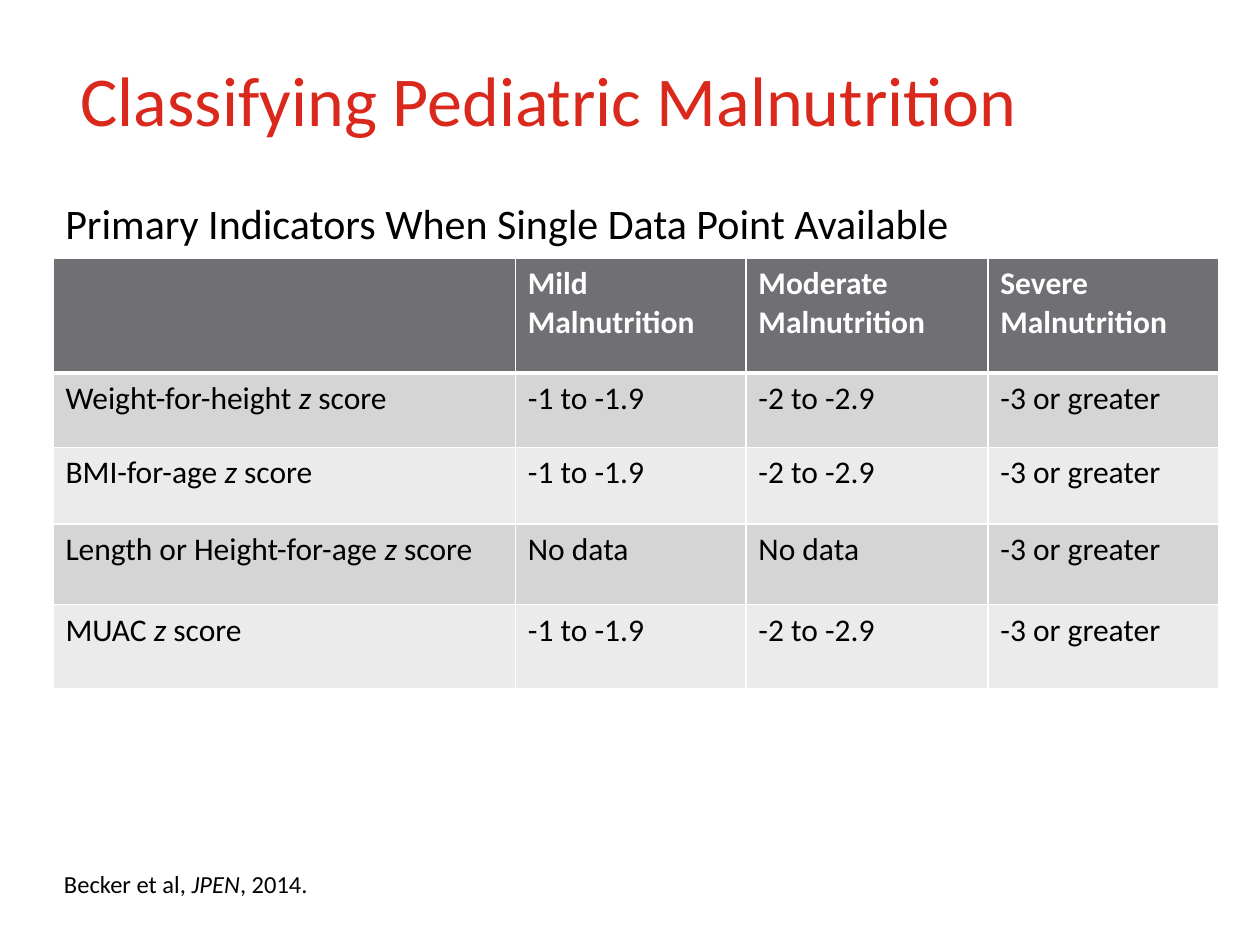
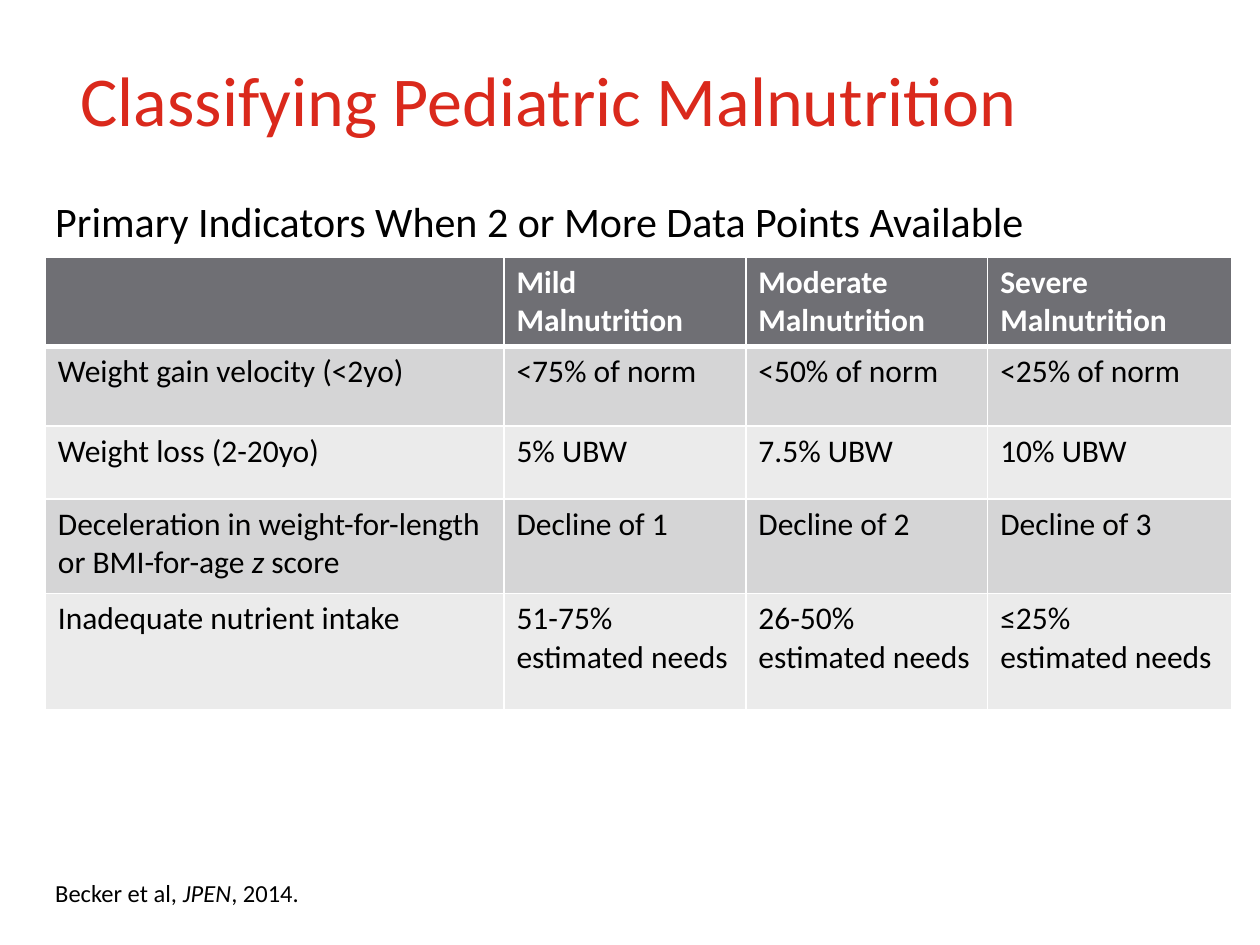
from dataclasses import dataclass

from lxml import etree
from pptx import Presentation
from pptx.dml.color import RGBColor
from pptx.enum.text import MSO_ANCHOR, MSO_AUTO_SIZE as AutoSize, PP_ALIGN
from pptx.oxml.ns import qn
from pptx.util import Inches, Pt

FONT = "Calibri"
RED, BLACK, WHITE = "DA291C", "000000", "FFFFFF"
HEADER_FILL, BAND_FILLS = "6F6F74", ("D5D5D6", "EBEBEB")
TITLE = "Classifying Pediatric Malnutrition"
HEADINGS = ("", "Mild Malnutrition", "Moderate Malnutrition", "Severe Malnutrition")
CITATION = "Becker et al, *JPEN*, 2014."


@dataclass
class Label:
    text: str
    left: float
    top: float
    width: float
    height: float
    size: int
    wrap: bool = False


@dataclass
class Grid:
    left: float
    top: float
    widths: tuple[float, ...]
    heights: tuple[float, ...]
    rows: tuple[tuple[str, ...], ...]


@dataclass
class IndicatorSlide:
    subtitle: Label
    grid: Grid
    citation: Label


SLIDES = (
    IndicatorSlide(
        Label("Primary Indicators When Single Data Point Available", 0.42, 1.52, 8.67, 0.5, 24, True),
        Grid(0.42, 2.05, (3.67, 1.83, 1.92, 1.83), (0.91, 0.59, 0.61, 0.64, 0.67), (
            HEADINGS,
            ("Weight-for-height *z* score", "-1 to -1.9", "-2 to -2.9", "-3 or greater"),
            ("BMI-for-age *z* score", "-1 to -1.9", "-2 to -2.9", "-3 or greater"),
            ("Length or Height-for-age *z* score", "No data", "No data", "-3 or greater"),
            ("MUAC *z* score", "-1 to -1.9", "-2 to -2.9", "-3 or greater"),
        )),
        Label(CITATION, 0.41, 6.85, 2.24, 0.34, 14),
    ),
    IndicatorSlide(
        Label("Primary Indicators When 2 or More Data Points Available", 0.34, 1.5, 7.9, 0.5, 24),
        Grid(0.36, 2.04, (3.64, 1.92, 1.92, 1.94), (0.7, 0.63, 0.58, 0.75, 0.92), (
            HEADINGS,
            ("Weight gain velocity (<2yo)", "<75% of norm", "<50% of norm", "<25% of norm"),
            ("Weight loss (2-20yo)", "5% UBW", "7.5% UBW", "10% UBW"),
            ("Deceleration in weight-for-length or BMI-for-age *z* score",
             "Decline of 1", "Decline of 2", "Decline of 3"),
            ("Inadequate nutrient intake", "51-75% estimated needs",
             "26-50%\nestimated needs", "≤25%\nestimated needs"),
        )),
        Label(CITATION, 0.34, 6.92, 2.24, 0.34, 14),
    ),
)


def rgb(color: str) -> RGBColor:
    return RGBColor.from_string(color)


def write(tf, text: str, size: int, color: str = BLACK, bold: bool = False) -> None:
    """Fill a text frame; asterisks enclose italics, newlines split paragraphs."""
    for i, line in enumerate(text.split("\n")):
        p = tf.add_paragraph() if i else tf.paragraphs[0]
        p.alignment = PP_ALIGN.LEFT
        p.font.name, p.font.size, p.font.bold = FONT, Pt(size), bold
        p.font.color.rgb = rgb(color)
        for j, part in enumerate(line.split("*")):
            if part:
                r = p.add_run()
                r.text = part
                if j % 2:
                    r.font.italic = True


def add_title(slide) -> None:
    sp = slide.shapes.title
    sp.left, sp.top, sp.width, sp.height = map(Inches, (0.54, 0.4, 9, 0.73))
    tf = sp.text_frame
    tf.auto_size, tf.vertical_anchor = AutoSize.NONE, MSO_ANCHOR.TOP
    write(tf, TITLE, 40, RED)


def add_label(slide, label: Label) -> None:
    box = map(Inches, (label.left, label.top, label.width, label.height))
    tf = slide.shapes.add_textbox(*box).text_frame
    tf.word_wrap, tf.auto_size = label.wrap, AutoSize.SHAPE_TO_FIT_TEXT
    write(tf, label.text, label.size)


def set_borders(cell, top: int, bottom: int) -> None:
    tc_pr = cell._tc.get_or_add_tcPr()
    for side, points in (("L", 1), ("R", 1), ("T", top), ("B", bottom)):
        ln = etree.SubElement(tc_pr, qn(f"a:ln{side}"), w=str(Pt(points)))
        fill = etree.SubElement(ln, qn("a:solidFill"))
        etree.SubElement(fill, qn("a:srgbClr"), val=WHITE)


def add_grid(slide, grid: Grid) -> None:
    size = Inches(sum(grid.widths)), Inches(sum(grid.heights))
    table = slide.shapes.add_table(len(grid.heights), len(grid.widths),
                                   Inches(grid.left), Inches(grid.top), *size).table
    for column, width in zip(table.columns, grid.widths):
        column.width = Inches(width)
    for i, (row, height, texts) in enumerate(zip(table.rows, grid.heights, grid.rows)):
        row.height = Inches(height)
        header = i == 0
        fill = HEADER_FILL if header else BAND_FILLS[(i - 1) % 2]
        for cell, text in zip(row.cells, texts):
            set_borders(cell, 3 if i == 1 else 1, 3 if header else 1)
            cell.fill.solid()
            cell.fill.fore_color.rgb = rgb(fill)
            write(cell.text_frame, text, 18, WHITE if header else BLACK, header)


def main() -> None:
    prs = Presentation()
    prs.slide_width, prs.slide_height = Inches(10), Inches(7.5)
    for content in SLIDES:
        slide = prs.slides.add_slide(prs.slide_layouts[5])
        add_title(slide)
        add_grid(slide, content.grid)
        add_label(slide, content.subtitle)
        add_label(slide, content.citation)
    prs.save("out.pptx")


if __name__ == "__main__":
    main()
